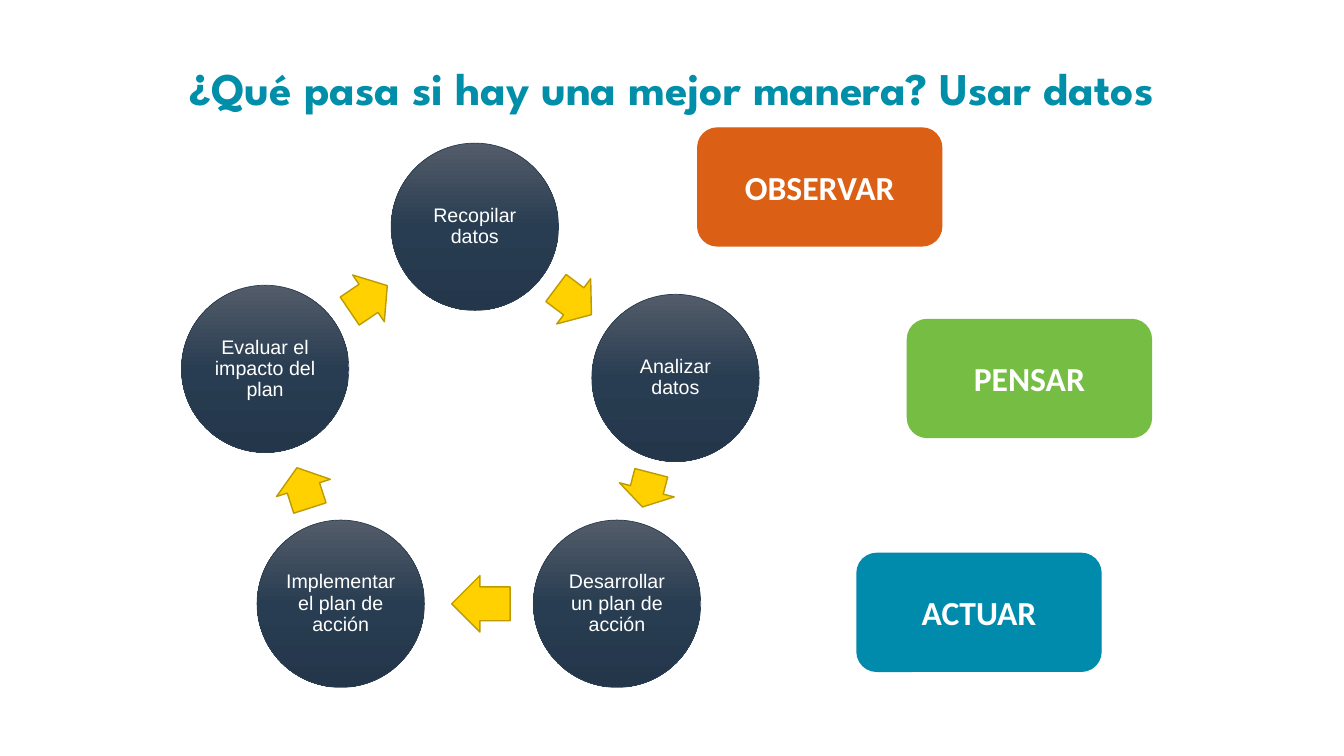
"""Build the slide showing a five-step data cycle beside observe, think and act."""
from copy import deepcopy

from pptx import Presentation
from pptx.dml.color import RGBColor
from pptx.enum import shapes, text
from pptx.oxml.ns import qn
from pptx.util import Inches, Pt


def rgb(value):
    return RGBColor.from_string(value)


def add_shape(kind, left, top, width, height, line, line_width):
    sp = s.shapes.add_shape(kind, Inches(left), Inches(top), Inches(width), Inches(height))
    sp.shadow.inherit = False
    sp.line.color.rgb = rgb(line)
    sp.line.width = Pt(line_width)
    return sp


def write(sp, words, font, size, color, bold=False):
    tf = sp.text_frame
    tf.word_wrap = True
    tf.vertical_anchor = text.MSO_ANCHOR.MIDDLE
    p = tf.paragraphs[0]
    p.text = words
    p.alignment = text.PP_ALIGN.CENTER
    p.font.name, p.font.size, p.font.bold = font, Pt(size), bold
    p.font.color.rgb = rgb(color)
    return tf


prs = Presentation()
prs.slide_width, prs.slide_height = Inches(13.33), Inches(7.5)
s = prs.slides.add_slide(prs.slide_layouts[5])

title = s.shapes.title
title.left, title.top = Inches(0), Inches(0.17)
title.width, title.height = Inches(13.33), Inches(1.4)
write(title, "¿Qué pasa si hay una mejor manera? Usar datos", "League Spartan", 32.4, "008EA9", True)

steps = [
    ("Recopilar datos", 3.88, 1.42),
    ("Analizar datos", 5.87, 2.92),
    ("Desarrollar un plan de acción", 5.29, 5.16),
    ("Implementar el plan de acción", 2.55, 5.16),
    ("Evaluar el impacto del plan", 1.8, 2.83),
]
gradient = [(0, "535C69"), (0.5, "293D52"), (1, "23364A")]
for words, left, top in steps:
    sp = add_shape(shapes.MSO_SHAPE.OVAL, left, top, 1.66, 1.66, "2B3D50", 0.5)
    sp.fill.gradient()
    sp.fill.gradient_angle = 270
    stops = sp._element.spPr.find(".//" + qn("a:gsLst"))
    stops.append(deepcopy(stops[0]))
    for stop, (position, color) in zip(sp.fill.gradient_stops, gradient):
        stop.position = position
        stop.color.rgb = rgb(color)
    tf = write(sp, words, "Arial", 14, "FFFFFF")
    tf.margin_left = tf.margin_top = tf.margin_right = tf.margin_bottom = Inches(0.02)
    tf.paragraphs[0].line_spacing = 0.9

arrows = [
    (5.47, 2.71, 0.44, 36.9),
    (6.24, 4.58, 0.35, 104.5),
    (4.48, 5.71, 0.58, 180),
    (2.8, 4.56, 0.42, 252.2),
    (3.43, 2.68, 0.45, 325.9),
]
for left, top, width, rotation in arrows:
    sp = add_shape(shapes.MSO_SHAPE.RIGHT_ARROW, left, top, width, 0.56, "BD9B00", 1)
    sp.adjustments[0], sp.adjustments[1] = 0.6, 0.5
    sp.rotation = rotation
    sp.fill.solid()
    sp.fill.fore_color.rgb = rgb("FFD100")

phases = [
    ("OBSERVAR", 6.92, 1.27, "DB6015"),
    ("PENSAR", 9, 3.17, "75BD43"),
    ("ACTUAR", 8.5, 5.49, "008AAB"),
]
for words, left, top, color in phases:
    sp = add_shape(shapes.MSO_SHAPE.ROUNDED_RECTANGLE, left, top, 2.42, 1.17, color, 1)
    sp.fill.solid()
    sp.fill.fore_color.rgb = rgb(color)
    write(sp, words, "Calibri", 24, "FFFFFF", True)

prs.save("out.pptx")
